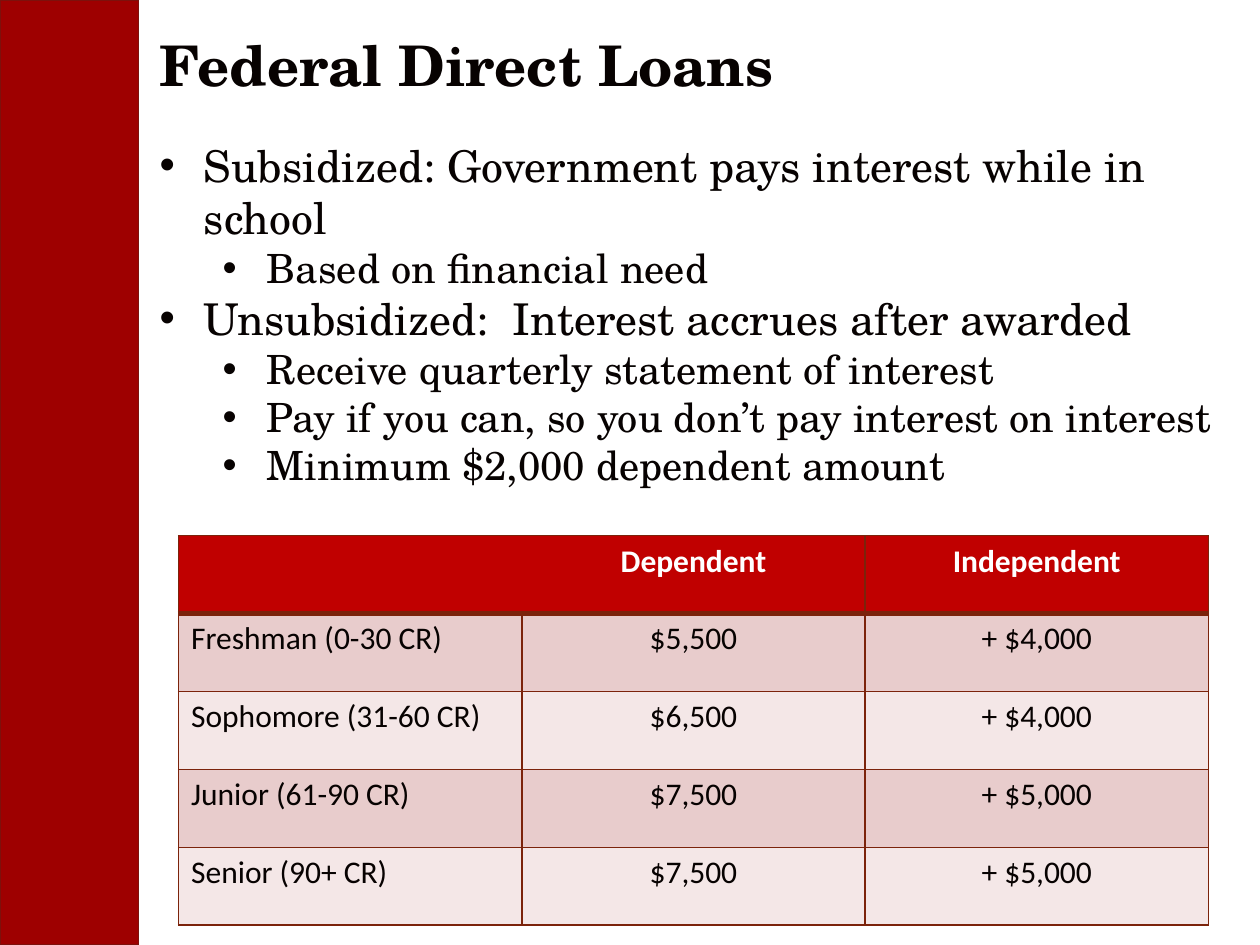
from lxml.etree import SubElement as Sub
from pptx import Presentation
from pptx.dml.color import RGBColor as RGB
from pptx.enum.shapes import MSO_SHAPE as Form
from pptx.enum.text import PP_ALIGN as Align
from pptx.oxml.ns import qn
from pptx.util import Cm, Pt

HUES = {"side": "9E0000", "edge": "7D110C", "text": "070201", "head": "C00000",
        "white": "FFFFFF", "odd": "E8CCCC", "even": "F4E7E7", "rule": "7B230B"}
SERIF, SANS = "TeX Gyre Schola", "Calibri"


def add_run(para, text, size, face, hue="text", bold=False):
    run = para.add_run()
    run.text = text
    font = run.font
    font.size, font.name, font.bold = Pt(size), face, bold
    font.color.rgb = RGB.from_string(HUES[hue])


def add_rule(cell, side, width):
    line = Sub(cell._tc.get_or_add_tcPr(), qn(f"a:ln{side}"), w=str(Pt(width)))
    Sub(Sub(line, qn("a:solidFill")), qn("a:srgbClr"), val=HUES["rule"])


deck = Presentation()
deck.slide_width, deck.slide_height = Cm(25.4), Cm(19.05)
slide = deck.slides.add_slide(deck.slide_layouts[6])
shapes = slide.shapes

# Side band
band = shapes.add_shape(Form.RECTANGLE, 0, 0, Cm(2.8), Cm(19.05))
band.shadow.inherit = False
band.fill.solid()
band.fill.fore_color.rgb = RGB.from_string(HUES["side"])
band.line.color.rgb = RGB.from_string(HUES["edge"])
band.line.width = Pt(0.75)

# Loan types
points = [
    (0, "Subsidized: Government pays interest while in school"),
    (1, "Based on financial need"),
    (0, "Unsubsidized:  Interest accrues after awarded"),
    (1, "Receive quarterly statement of interest"),
    (1, "Pay if you can, so you don’t pay interest on interest"),
    (1, "Minimum $2,000 dependent amount"),
]
body = shapes.add_textbox(Cm(2.74), Cm(2.54), Cm(22.66), Cm(15.88)).text_frame
body.word_wrap = True
body.margin_left, body.margin_top = Cm(0.15), Cm(0.25)
for i, (level, text) in enumerate(points):
    para = body.add_paragraph() if i else body.paragraphs[0]
    para.level = level
    props = para._p.get_or_add_pPr()
    props.set("marL", str(Cm(1.22 + 1.27 * level)))
    props.set("indent", str(Cm(-0.89)))
    Sub(props, qn("a:buFont"), typeface="Arial")
    Sub(props, qn("a:buChar"), char="•")
    add_run(para, text, 25 - 2 * level, SERIF)

# Title
title = shapes.add_textbox(Cm(2.97), Cm(0.64), Cm(21.39), Cm(2.11)).text_frame
title.word_wrap = True
title.paragraphs[0].line_spacing = 0.9
add_run(title.paragraphs[0], "Federal Direct Loans", 32, SERIF, bold=True)

# Loan limits
limits = [
    ("", "Dependent", "Independent"),
    ("Freshman (0-30 CR)", "$5,500", "+ $4,000"),
    ("Sophomore (31-60 CR)", "$6,500", "+ $4,000"),
    ("Junior (61-90 CR)", "$7,500", "+ $5,000"),
    ("Senior (90+ CR)", "$7,500", "+ $5,000"),
]
table = shapes.add_table(5, 3, Cm(3.6), Cm(10.8), Cm(20.76), Cm(7.85)).table
# Plain style without grid or banding
table._tbl.tblPr.find(qn("a:tableStyleId")).text = "{2D5ABB26-0587-4C30-8999-92F81FD0307C}"
table.horz_banding = False
for col in table.columns:
    col.width = Cm(6.92)
for r, texts in enumerate(limits):
    table.rows[r].height = Cm(1.57)
    for c, text in enumerate(texts):
        cell = table.cell(r, c)
        for side in "LRTB":
            # The first two heading cells have no rule between them
            if r == 0 and (c, side) in [(0, "R"), (1, "L")]:
                continue
            thick = (r, side) in [(0, "B"), (1, "T")]
            add_rule(cell, side, 3 if thick else 1)
        cell.fill.solid()
        fill = "head" if r == 0 else "odd" if r % 2 else "even"
        cell.fill.fore_color.rgb = RGB.from_string(HUES[fill])
        para = cell.text_frame.paragraphs[0]
        if c:
            para.alignment = Align.CENTER
        if text:
            add_run(para, text, 18, SANS, "text" if r else "white", r == 0)

deck.save("out.pptx")
